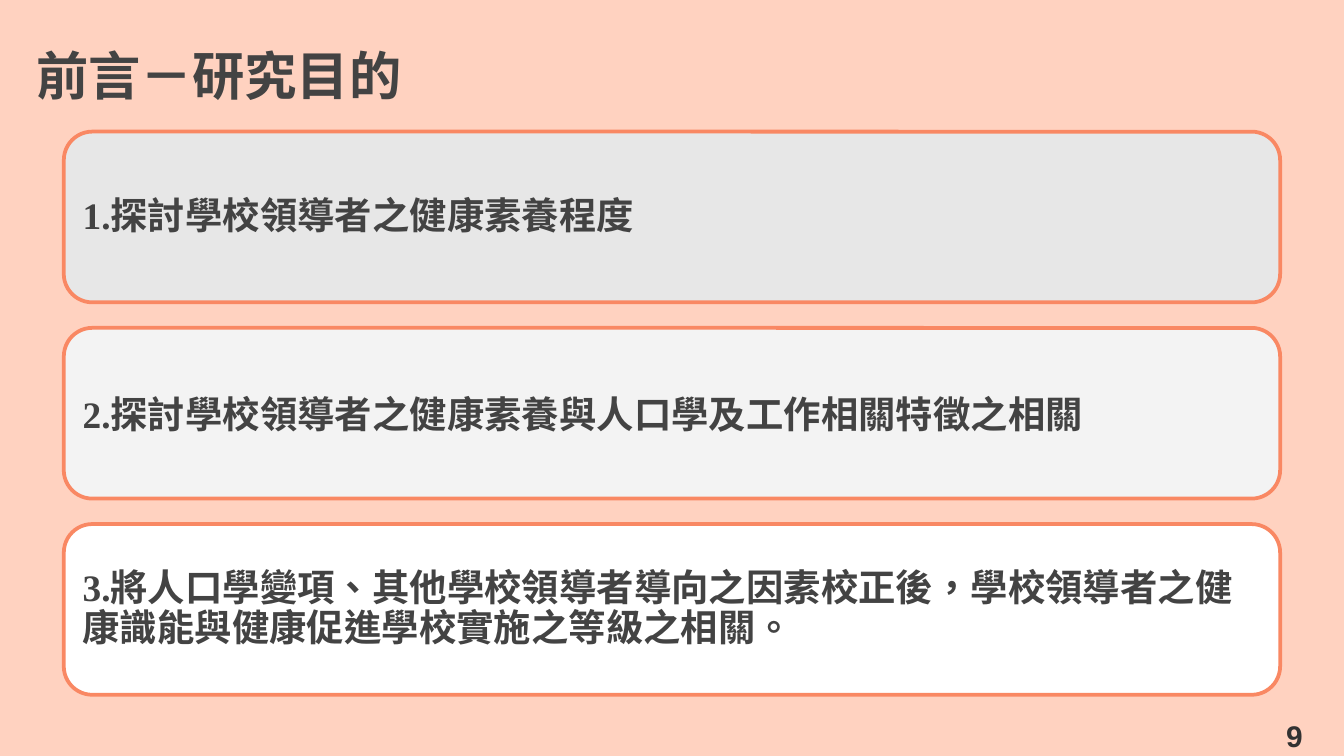
from lxml import etree
from pptx import Presentation
from pptx.dml.color import RGBColor
from pptx.enum.lang import MSO_LANGUAGE_ID
from pptx.enum.shapes import MSO_SHAPE
from pptx.enum.text import MSO_ANCHOR, PP_ALIGN
from pptx.oxml.ns import qn
from pptx.util import Inches, Pt

ROUNDED = MSO_SHAPE.ROUNDED_RECTANGLE
TOP, MIDDLE = MSO_ANCHOR.TOP, MSO_ANCHOR.MIDDLE
LEFT, RIGHT = PP_ALIGN.LEFT, PP_ALIGN.RIGHT
CHINESE = MSO_LANGUAGE_ID.TRADITIONAL_CHINESE

PEACH = RGBColor(0xFF, 0xD2, 0xC0)
CORAL = RGBColor(0xF9, 0x88, 0x63)
GRAY = RGBColor(0xE7, 0xE7, 0xE7)
LIGHT_GRAY = RGBColor(0xF3, 0xF3, 0xF3)
WHITE = RGBColor(0xFF, 0xFF, 0xFF)
DARK = RGBColor(0x43, 0x43, 0x43)
NUMBER_COLOR = RGBColor(0x32, 0x32, 0x32)

CJK_FONT = "Noto Sans CJK SC"
SLIDE_WIDTH = 10
SLIDE_HEIGHT = SLIDE_WIDTH * 9 / 16


class SlideBuilder:
    """Holds the style and the current slide."""

    def __init__(self, slide):
        self.slide = slide
        background = slide.background.fill
        background.solid()
        background.fore_color.rgb = PEACH

    def card(self, left, top, width, height, color):
        shape = self.slide.shapes.add_shape(
            ROUNDED, Inches(left), Inches(top), Inches(width), Inches(height))
        shape.shadow.inherit = False
        shape.fill.solid()
        shape.fill.fore_color.rgb = color
        shape.line.color.rgb = CORAL
        shape.line.width = Pt(2)

    def text(self, text, left, top, width, height, size, font_name="Times New Roman",
             color=DARK, inset=0.1, anchor=MIDDLE, paragraph_format=None):
        box = self.slide.shapes.add_textbox(
            Inches(left), Inches(top), Inches(width), Inches(height))
        frame = box.text_frame
        frame.word_wrap = True
        frame.vertical_anchor = anchor
        for side in ("left", "top", "right", "bottom"):
            setattr(frame, f"margin_{side}", Inches(inset))

        paragraph = frame.paragraphs[0]
        for name, value in (paragraph_format or {}).items():
            setattr(paragraph, name, value)
        run = paragraph.add_run()
        run.text = text
        run.font.color.rgb = color
        font_format = {"name": font_name, "size": Pt(size), "bold": True,
                       "language_id": CHINESE}
        for name, value in font_format.items():
            setattr(run.font, name, value)
        # Typeface for the Chinese characters
        properties = run._r.get_or_add_rPr()
        etree.SubElement(properties, qn("a:ea"), typeface=CJK_FONT)


def main():
    presentation = Presentation()
    presentation.slide_width = Inches(SLIDE_WIDTH)
    presentation.slide_height = Inches(SLIDE_HEIGHT)
    builder = SlideBuilder(presentation.slides.add_slide(presentation.slide_layouts[6]))

    # Research aims, one centred card each
    tight = {"line_spacing": 0.9, "space_after": Pt(7), "alignment": LEFT}
    plain = {"alignment": LEFT}
    aims = [
        ("1.探討學校領導者之健康素養程度", GRAY, tight),
        ("2.探討學校領導者之健康素養與人口學及工作相關特徵之相關", LIGHT_GRAY, plain),
        ("3.將人口學變項、其他學校領導者導向之因素校正後，"
         "學校領導者之健康識能與健康促進學校實施之等級之相關。", WHITE, tight),
    ]
    width, height, gap, padding = 9.05, 1.27, 0.19, 0.06
    left, first_top = (SLIDE_WIDTH - width) / 2, 0.98
    for index, (aim, color, paragraph_format) in enumerate(aims):
        top = first_top + index * (height + gap)
        builder.card(left, top, width, height, color)
        builder.text(aim, left + padding, top + padding, width - 2 * padding,
                     height - 2 * padding, 20, inset=0.08,
                     paragraph_format=paragraph_format)

    # Slide number and title
    builder.text("9", 7.54, 5.32, 2.25, 0.3, 16, "Arial", NUMBER_COLOR,
                 paragraph_format={"alignment": RIGHT})
    builder.text("前言－研究目的", 0.17, 0.22, 9.66, 0.63, 28, CJK_FONT, anchor=TOP,
                 paragraph_format=plain)

    presentation.save("out.pptx")


if __name__ == "__main__":
    main()
